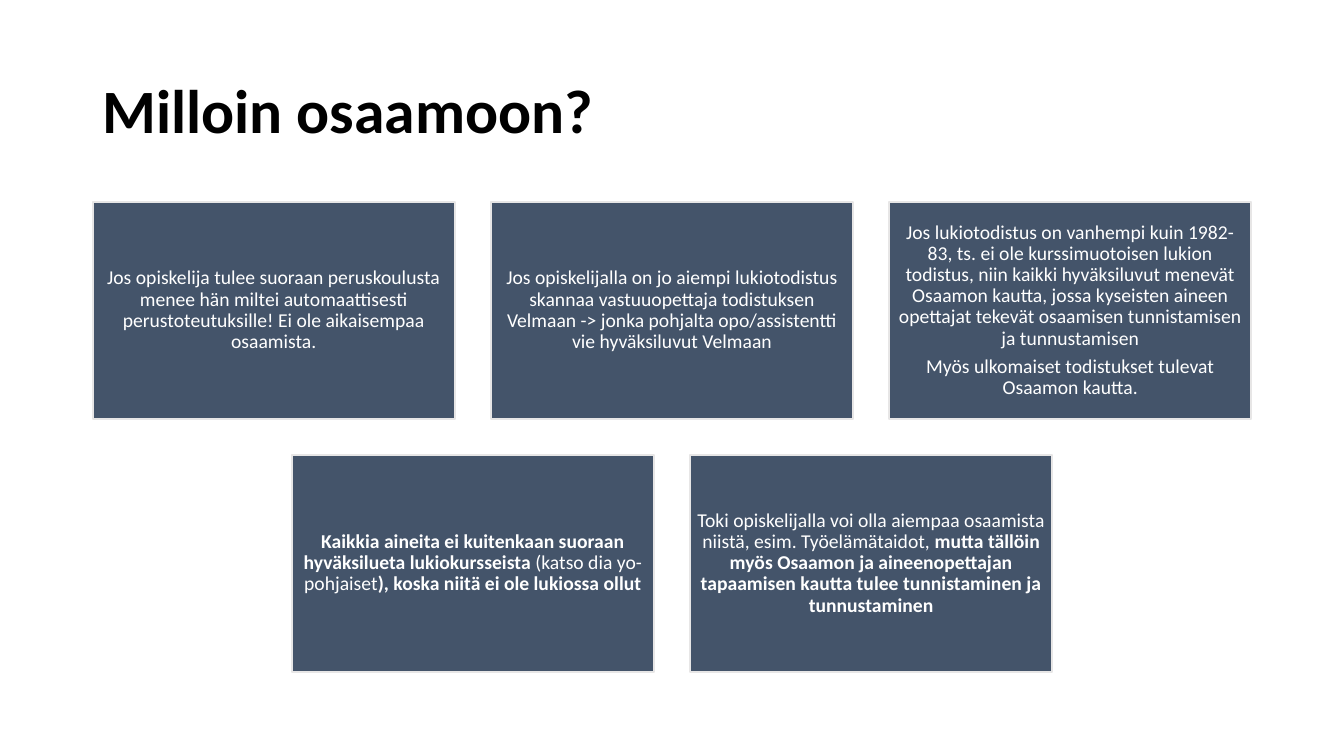
from dataclasses import dataclass

from pptx import Presentation
from pptx.dml.color import RGBColor as RGB
from pptx.enum.shapes import MSO_SHAPE as Shape
from pptx.enum.text import MSO_ANCHOR as Anchor, PP_ALIGN as Align
from pptx.slide import Slide
from pptx.text.text import TextFrame as Frame
from pptx.util import Inches, Pt


@dataclass(frozen=True)
class Theme:
    font: str = "Calibri"
    ink: RGB = RGB(0x00, 0x00, 0x00)
    fill: RGB = RGB(0x44, 0x54, 0x6A)
    edge: RGB = RGB(0xE7, 0xE6, 0xE6)
    light: RGB = RGB(0xFF, 0xFF, 0xFF)
    head: float = 44
    body: float = 14
    after: float = 4.9
    lead: float = 0.9


@dataclass(frozen=True)
class Run:
    text: str
    bold: bool = False


@dataclass(frozen=True)
class Card:
    paras: list[list[Run]]


THEME = Theme()

# Card grid: each row is centred on the same axis
WIDE, HIGH, GAP = 3.59, 2.16, 0.36
TOP, STEP, MID = 2.0, 2.51, 6.665

ROWS = [
    [
        Card([[Run("Jos opiskelija tulee suoraan peruskoulusta menee hän miltei "
                   "automaattisesti perustoteutuksille! Ei ole aikaisempaa osaamista.")]]),
        Card([[Run("Jos opiskelijalla on jo aiempi lukiotodistus skannaa "
                   "vastuuopettaja todistuksen Velmaan -> jonka pohjalta "
                   "opo/assistentti vie hyväksiluvut Velmaan")]]),
        Card([
            [Run("Jos lukiotodistus on vanhempi kuin 1982-83, ts. ei ole "
                 "kurssimuotoisen lukion todistus, niin kaikki hyväksiluvut "
                 "menevät Osaamon kautta, jossa kyseisten aineen opettajat "
                 "tekevät osaamisen tunnistamisen ja tunnustamisen")],
            [Run("Myös ulkomaiset todistukset tulevat Osaamon kautta.")],
        ]),
    ],
    [
        Card([[
            Run("Kaikkia aineita ei kuitenkaan suoraan hyväksilueta "
                "lukiokursseista ", True),
            Run("(katso dia yo-pohjaiset"),
            Run("), koska niitä ei ole lukiossa ollut", True),
        ]]),
        Card([[
            Run("Toki opiskelijalla voi olla aiempaa osaamista niistä, esim. "
                "Työelämätaidot, "),
            Run("mutta tällöin myös Osaamon ja aineenopettajan tapaamisen "
                "kautta tulee tunnistaminen ja tunnustaminen", True),
        ]]),
    ],
]


def write(frame: Frame, paras: list[list[Run]], size: float, ink: RGB,
          align: Align, after: float = 0) -> None:
    frame.word_wrap = True
    frame.vertical_anchor = Anchor.MIDDLE
    for i, runs in enumerate(paras):
        para = frame.add_paragraph() if i else frame.paragraphs[0]
        para.alignment = align
        para.line_spacing = THEME.lead
        para.space_after = Pt(after)
        for item in runs:
            run = para.add_run()
            run.text = item.text
            font = run.font
            font.name, font.size, font.bold = THEME.font, Pt(size), item.bold
            font.color.rgb = ink


def draw_card(slide: Slide, card: Card, left: float, top: float) -> None:
    box = slide.shapes.add_shape(Shape.RECTANGLE, Inches(left), Inches(top),
                                 Inches(WIDE), Inches(HIGH))
    box.shadow.inherit = False
    box.fill.solid()
    box.fill.fore_color.rgb = THEME.fill
    box.line.color.rgb = THEME.edge
    box.line.width = Pt(1.5)
    frame = box.text_frame
    frame.margin_left = frame.margin_right = Inches(0.06)
    frame.margin_top = frame.margin_bottom = Inches(0.06)
    write(frame, card.paras, THEME.body, THEME.light, Align.CENTER, THEME.after)


def main() -> None:
    deck = Presentation()
    deck.slide_width, deck.slide_height = Inches(13.33), Inches(7.5)
    slide = deck.slides.add_slide(deck.slide_layouts[6])

    # Title
    title = slide.shapes.add_textbox(Inches(0.92), Inches(0.4),
                                     Inches(11.5), Inches(1.45))
    write(title.text_frame, [[Run("Milloin osaamoon?", True)]],
          THEME.head, THEME.ink, Align.LEFT)

    # Cards
    for r, row in enumerate(ROWS):
        span = len(row) * (WIDE + GAP) - GAP
        for c, card in enumerate(row):
            left = MID - span / 2 + c * (WIDE + GAP)
            draw_card(slide, card, left, TOP + r * STEP)

    deck.save("out.pptx")


if __name__ == "__main__":
    main()
